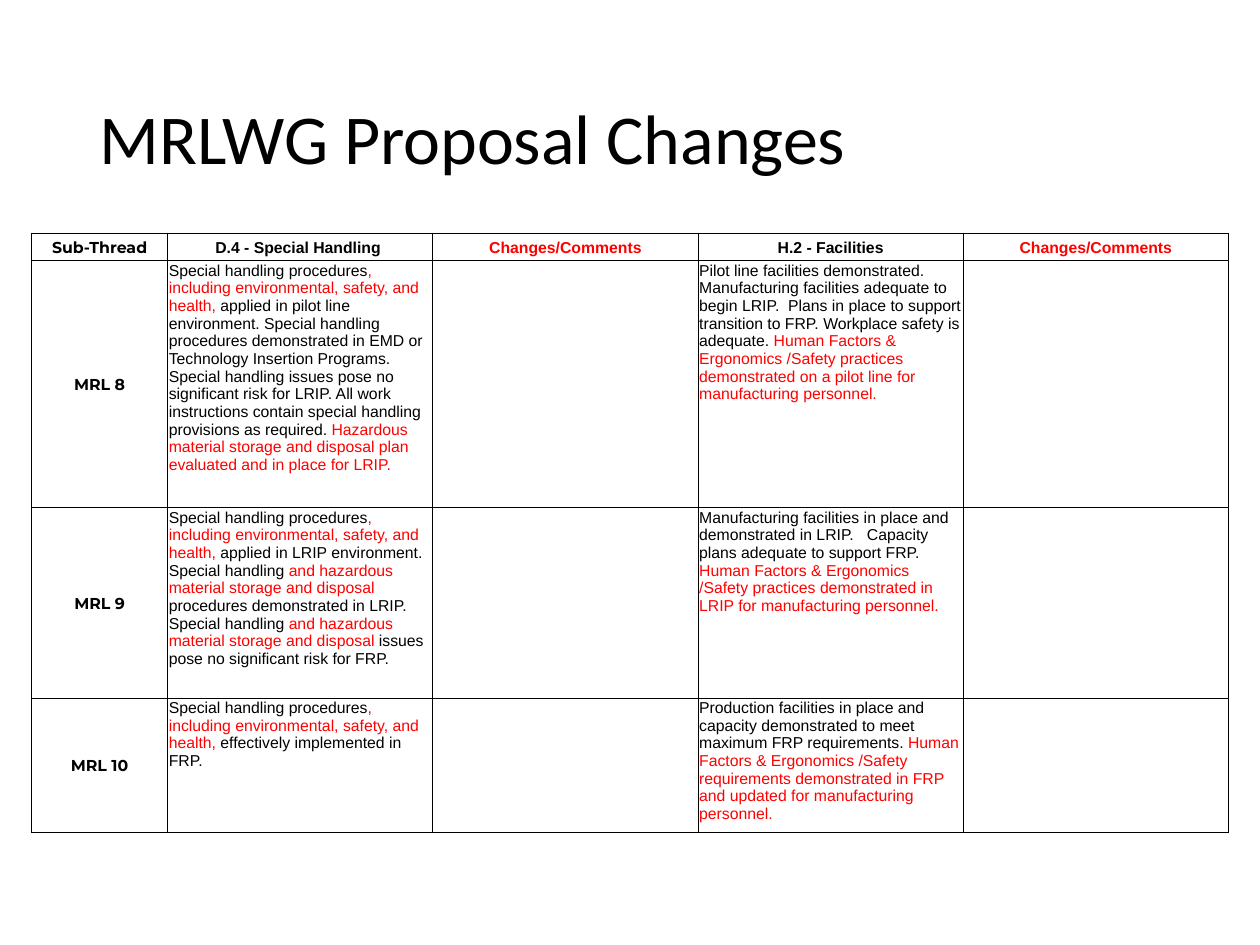
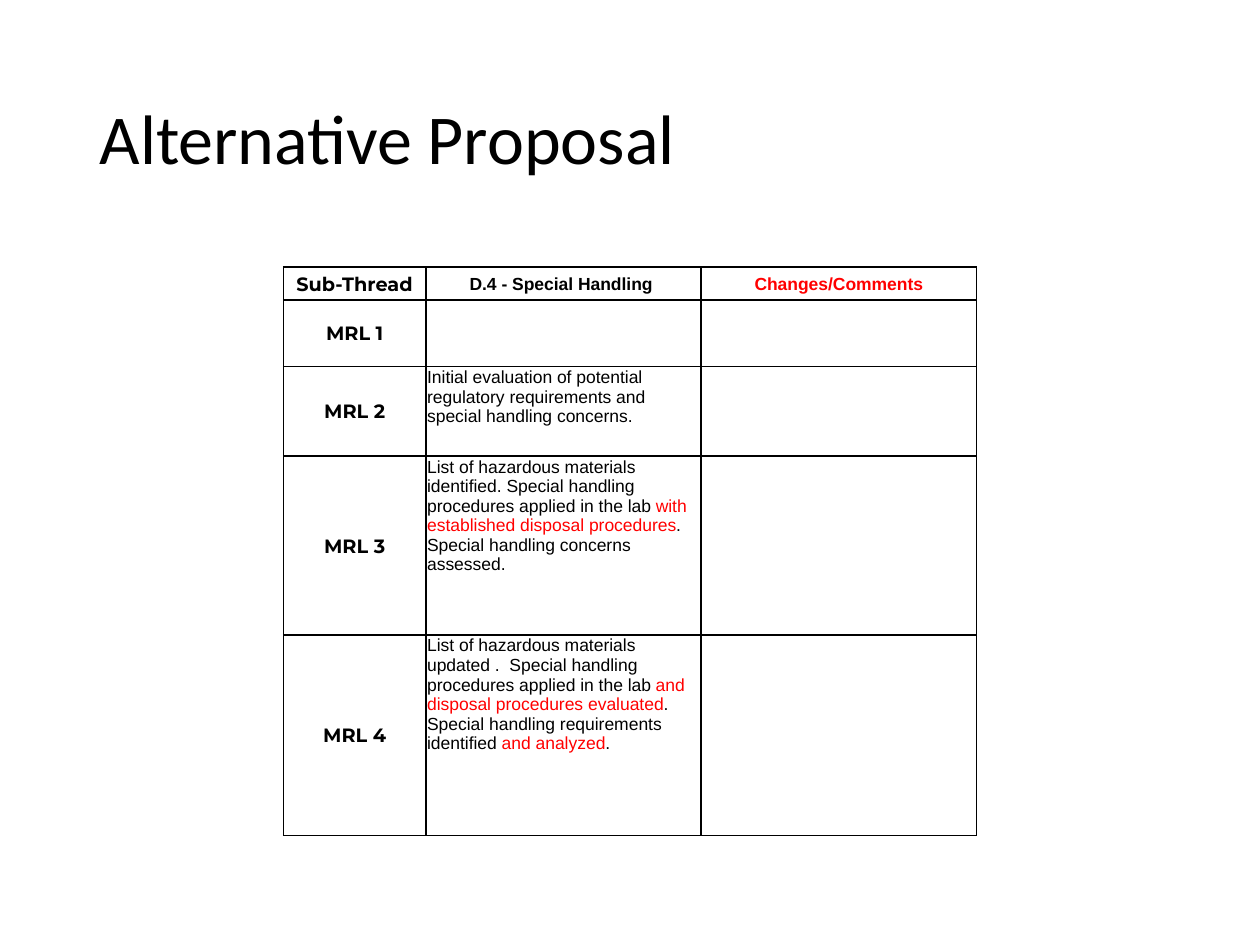
import dataclasses

import lxml.etree
import pptx
import pptx.dml.color
import pptx.enum.text
import pptx.oxml.ns
import pptx.util

Inches = pptx.util.Inches
Pt = pptx.util.Pt
ALIGN = pptx.enum.text.PP_ALIGN
ANCHOR = pptx.enum.text.MSO_ANCHOR

# Shared style
COLORS = {"text": "000000", "change": "FF0000", "border": "000000"}
TITLE_FONT, LABEL_FONT, BODY_FONT = "Calibri", "Montserrat", "Arial"
TITLE_ONLY_LAYOUT = 5
CHANGE_MARK = "*"  # encloses proposed wording, shown in the change colour

# Repeated wording
LABEL_HEADING = "Sub-Thread"
HANDLING_HEADING = "D.4 - Special Handling "
CHANGES_HEADING = "*Changes/Comments*"
SAFE_HANDLING = "Special handling procedures*, including environmental, safety, and health,*"
HAZARDOUS = "*and hazardous material storage and disposal *"
ERGONOMICS = "Human Factors & Ergonomics /Safety"


@dataclasses.dataclass
class ProposalTable:
    left: float
    top: float
    width: float
    label_width: float
    row_heights: list[float]
    label_size: float
    body_size: float
    inner_border: float
    rows: list[list[str]]


@dataclasses.dataclass
class ProposalSlide:
    title: str
    table: ProposalTable


SLIDES = [
    ProposalSlide(
        "MRLWG Proposal Changes",
        ProposalTable(
            left=0.25, top=1.85, width=9.5, label_width=1.08,
            row_heights=[0.22, 1.96, 1.51, 1.07],
            label_size=9, body_size=9, inner_border=0.5,
            rows=[
                [LABEL_HEADING, HANDLING_HEADING, CHANGES_HEADING,
                 "H.2 - Facilities", CHANGES_HEADING],
                ["MRL 8",
                 f"{SAFE_HANDLING} applied in pilot line environment. Special handling "
                 "procedures demonstrated in EMD or Technology Insertion Programs.  "
                 "Special handling issues pose no significant risk for LRIP. All work "
                 "instructions contain special handling provisions as required. "
                 "*Hazardous material storage and disposal plan evaluated and in place "
                 "for LRIP.*",
                 "",
                 "Pilot line facilities demonstrated. Manufacturing facilities adequate "
                 "to begin LRIP.  Plans in place to support transition to FRP. Workplace "
                 f"safety is adequate. *{ERGONOMICS} practices demonstrated on a pilot "
                 "line for manufacturing personnel.*",
                 ""],
                ["MRL 9",
                 f"{SAFE_HANDLING} applied in LRIP environment. Special handling "
                 f"{HAZARDOUS}procedures demonstrated in LRIP.  Special handling "
                 f"{HAZARDOUS}issues pose no significant risk for FRP.",
                 "",
                 "Manufacturing facilities in place and demonstrated in LRIP.   Capacity "
                 f"plans adequate to support FRP. *{ERGONOMICS} practices demonstrated "
                 "in LRIP for manufacturing personnel.*",
                 ""],
                ["MRL 10",
                 f"{SAFE_HANDLING} effectively implemented in FRP.",
                 "",
                 "Production facilities in place and capacity demonstrated to meet "
                 f"maximum FRP requirements. *{ERGONOMICS} requirements demonstrated in "
                 "FRP and updated for manufacturing personnel.*",
                 ""],
            ],
        ),
    ),
    ProposalSlide(
        "Alternative Proposal",
        ProposalTable(
            left=2.25, top=2.12, width=5.5, label_width=1.13,
            row_heights=[0.26, 0.53, 0.71, 1.42, 1.59],
            label_size=11, body_size=10, inner_border=1,
            rows=[
                [LABEL_HEADING, HANDLING_HEADING, CHANGES_HEADING],
                ["MRL 1", "", ""],
                ["MRL 2",
                 "Initial evaluation of potential regulatory requirements and special "
                 "handling concerns.",
                 ""],
                ["MRL 3",
                 "List of hazardous materials identified. Special handling procedures "
                 "applied in the lab *with established disposal procedures*. Special "
                 "handling concerns assessed.",
                 ""],
                ["MRL 4",
                 "List of hazardous materials updated .  Special handling procedures "
                 "applied in the lab* and disposal procedures evaluated*. Special "
                 "handling requirements identified* and analyzed*.",
                 ""],
            ],
        ),
    ),
]


def write_text(text_frame: pptx.text.text.TextFrame, text: str, *, font: str, size: float,
               bold: bool = False, align: ALIGN = ALIGN.LEFT,
               line_spacing: float = 1.0) -> None:
    """Write one paragraph, colouring the marked wording as a change."""
    paragraph = text_frame.paragraphs[0]
    paragraph.alignment = align
    paragraph.line_spacing = line_spacing
    for index, part in enumerate(text.split(CHANGE_MARK)):
        if not part:
            continue
        run = paragraph.add_run()
        run.text = part
        run.font.name = font
        run.font.size = Pt(size)
        run.font.bold = bold
        color = COLORS["change" if index % 2 else "text"]
        run.font.color.rgb = pptx.dml.color.RGBColor.from_string(color)


def set_borders(cell: pptx.table._Cell, widths: dict[str, float]) -> None:
    """Give each side (L, R, T, B) a solid line, placed ahead of the cell fill."""
    properties = cell._tc.get_or_add_tcPr()
    qualified = pptx.oxml.ns.qn
    for position, (side, width) in enumerate(widths.items()):
        line = lxml.etree.Element(qualified(f"a:ln{side}"), w=str(Pt(width)))
        fill = lxml.etree.SubElement(line, qualified("a:solidFill"))
        lxml.etree.SubElement(fill, qualified("a:srgbClr"), val=COLORS["border"])
        properties.insert(position, line)


def add_title(slide: pptx.slide.Slide, text: str) -> None:
    title = slide.shapes.title
    title.left, title.top = Inches(0.69), Inches(0.4)
    title.width, title.height = Inches(8.62), Inches(1.45)
    title.text_frame.vertical_anchor = ANCHOR.MIDDLE
    write_text(title.text_frame, text, font=TITLE_FONT, size=40, line_spacing=0.9)


def add_proposal_table(slide: pptx.slide.Slide, proposal: ProposalTable) -> None:
    last_row, last_column = len(proposal.rows) - 1, len(proposal.rows[0]) - 1
    frame = slide.shapes.add_table(
        last_row + 1, last_column + 1, Inches(proposal.left), Inches(proposal.top),
        Inches(proposal.width), Inches(sum(proposal.row_heights)))
    table = frame.table
    table.first_row = table.horz_banding = False

    # The label column is fixed; the others share the rest equally
    text_width = (proposal.width - proposal.label_width) / last_column
    for index, column in enumerate(table.columns):
        column.width = Inches(text_width if index else proposal.label_width)
    for row, height in zip(table.rows, proposal.row_heights):
        row.height = Inches(height)

    for row_index, texts in enumerate(proposal.rows):
        for column_index, text in enumerate(texts):
            cell = table.cell(row_index, column_index)
            is_label = column_index == 0
            is_heading = is_label or row_index == 0
            cell.fill.background()
            inner = proposal.inner_border
            set_borders(cell, {
                "L": 1 if column_index <= 1 else inner,
                "R": 1 if column_index in (0, last_column) else inner,
                "T": inner,
                "B": 1 if row_index == last_row else inner,
            })
            if not text:
                continue
            cell.margin_left = cell.margin_right = cell.margin_top = Inches(0.01)
            cell.margin_bottom = 0
            cell.vertical_anchor = ANCHOR.MIDDLE if is_heading else ANCHOR.TOP
            write_text(cell.text_frame, text,
                       font=LABEL_FONT if is_label else BODY_FONT,
                       size=proposal.label_size if is_label else proposal.body_size,
                       bold=is_heading,
                       align=ALIGN.CENTER if is_heading else ALIGN.LEFT)


def main() -> None:
    presentation = pptx.Presentation()
    presentation.slide_width, presentation.slide_height = Inches(10), Inches(7.5)
    layout = presentation.slide_layouts[TITLE_ONLY_LAYOUT]
    for content in SLIDES:
        slide = presentation.slides.add_slide(layout)
        add_title(slide, content.title)
        add_proposal_table(slide, content.table)
    presentation.save("out.pptx")


if __name__ == "__main__":
    main()
